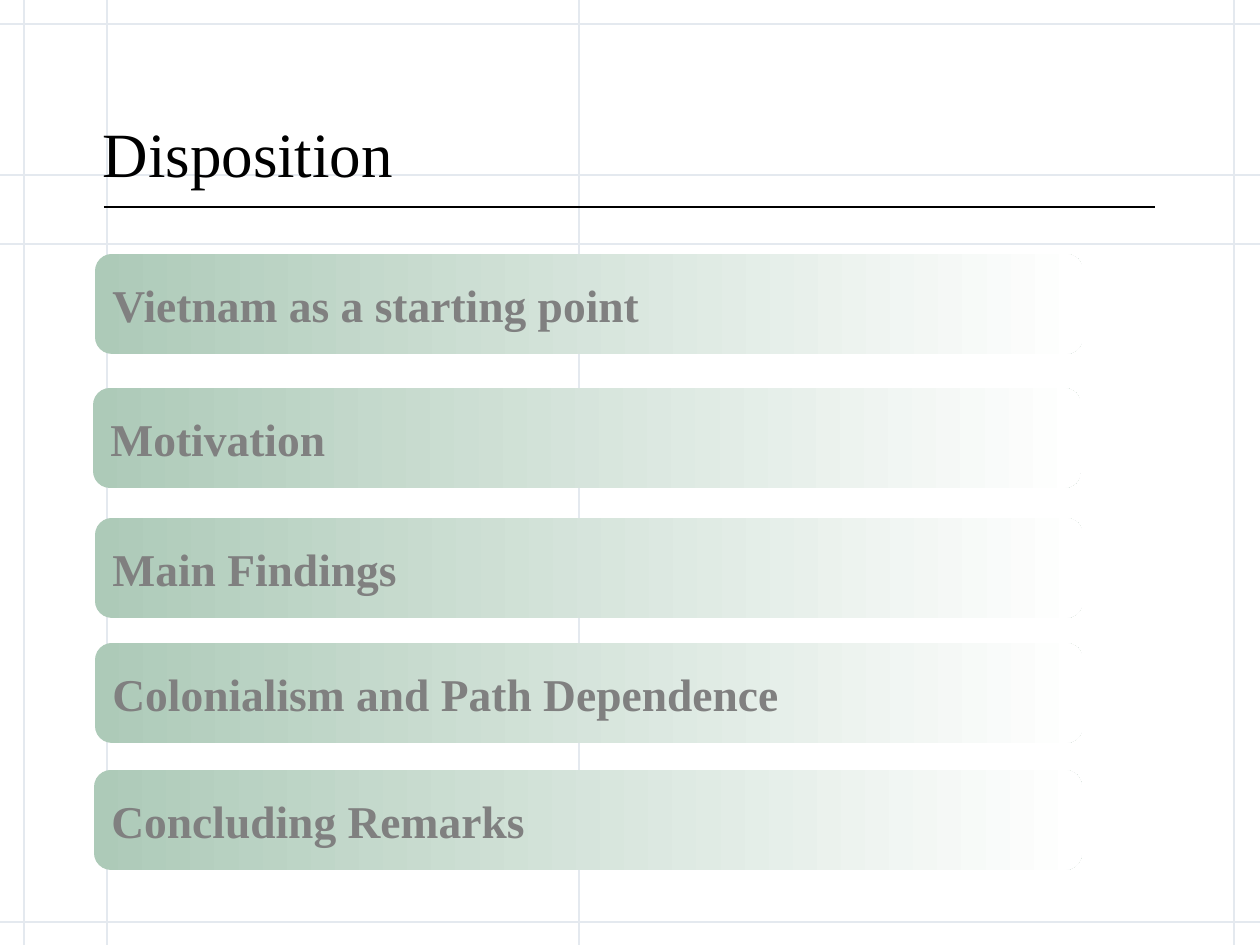
import pptx
import pptx.util
import pptx.dml.color
import pptx.enum.shapes
import pptx.enum.text
import pptx.oxml.ns
import lxml.etree

RGB = pptx.dml.color.RGBColor
BLACK = RGB(0x00, 0x00, 0x00)
WHITE = RGB(0xFF, 0xFF, 0xFF)
GRAY = RGB(0x80, 0x80, 0x80)
PALE = RGB(0xE4, 0xE9, 0xEF)
GREEN = RGB(0xAD, 0xCA, 0xB8)
FONT = "Times New Roman"
SCALE = 914400 / 126
WIDE, HIGH = 1260, 945


def px(*sizes):
    """Turn px lengths into EMU."""
    return [round(size * SCALE) for size in sizes]


def rule(x1, y1, x2, y2, color):
    """Draw a thin straight line without a shadow."""
    kind = pptx.enum.shapes.MSO_CONNECTOR.STRAIGHT
    line = slide.shapes.add_connector(kind, *px(x1, y1, x2, y2))
    line.line.color.rgb = color
    line.line.width = pptx.util.Pt(0.75)
    lxml.etree.SubElement(line._element.spPr, pptx.oxml.ns.qn("a:effectLst"))


deck = pptx.Presentation()
deck.slide_width, deck.slide_height = px(WIDE, HIGH)
slide = deck.slides.add_slide(deck.slide_layouts[5])

# Background grid and title rule
for y in (244, 24, 175, 922):
    rule(0, y, WIDE, y, PALE)
for x in (24, 1234, 579, 107):
    rule(x, 0, x, HIGH, PALE)
rule(104, 207, 1155, 207, BLACK)

# Title, in front of the grid
title = slide.shapes.title
slide.shapes._spTree.append(title._element)
title.left, title.top, title.width, title.height = px(90, 39, 1065, 157)
frame = title.text_frame
frame.text = "Disposition"
frame.word_wrap = True
frame.auto_size = pptx.enum.text.MSO_AUTO_SIZE.NONE
frame.vertical_anchor = pptx.enum.text.MSO_ANCHOR.BOTTOM
para = frame.paragraphs[0]
para.alignment = pptx.enum.text.PP_ALIGN.LEFT
font = para.runs[0].font
font.name, font.size = FONT, pptx.util.Pt(36)
font.color.rgb = BLACK

# Agenda bars
bars = [
    (95, 254, "Vietnam as a starting point"),
    (93, 388, "Motivation"),
    (95, 518, "Main Findings"),
    (95, 643, "Colonialism and Path Dependence"),
    (94, 770, "Concluding Remarks"),
]
for left, top, text in bars:
    bar = slide.shapes.add_shape(
        pptx.enum.shapes.MSO_SHAPE.ROUNDED_RECTANGLE, *px(left, top, 988, 100))
    bar.adjustments[0] = 0.17
    bar.shadow.inherit = False
    bar.line.fill.background()
    bar.fill.gradient()
    bar.fill.gradient_angle = 0
    for stop, color, place in zip(bar.fill.gradient_stops, (GREEN, WHITE), (0, 1)):
        stop.color.rgb = color
        stop.position = place
    frame = bar.text_frame
    frame.text = text
    frame.word_wrap = True
    frame.vertical_anchor = pptx.enum.text.MSO_ANCHOR.MIDDLE
    para = frame.paragraphs[0]
    para.alignment = pptx.enum.text.PP_ALIGN.LEFT
    font = para.runs[0].font
    font.name, font.size, font.bold = FONT, pptx.util.Pt(26), True
    font.color.rgb = GRAY

deck.save("out.pptx")
